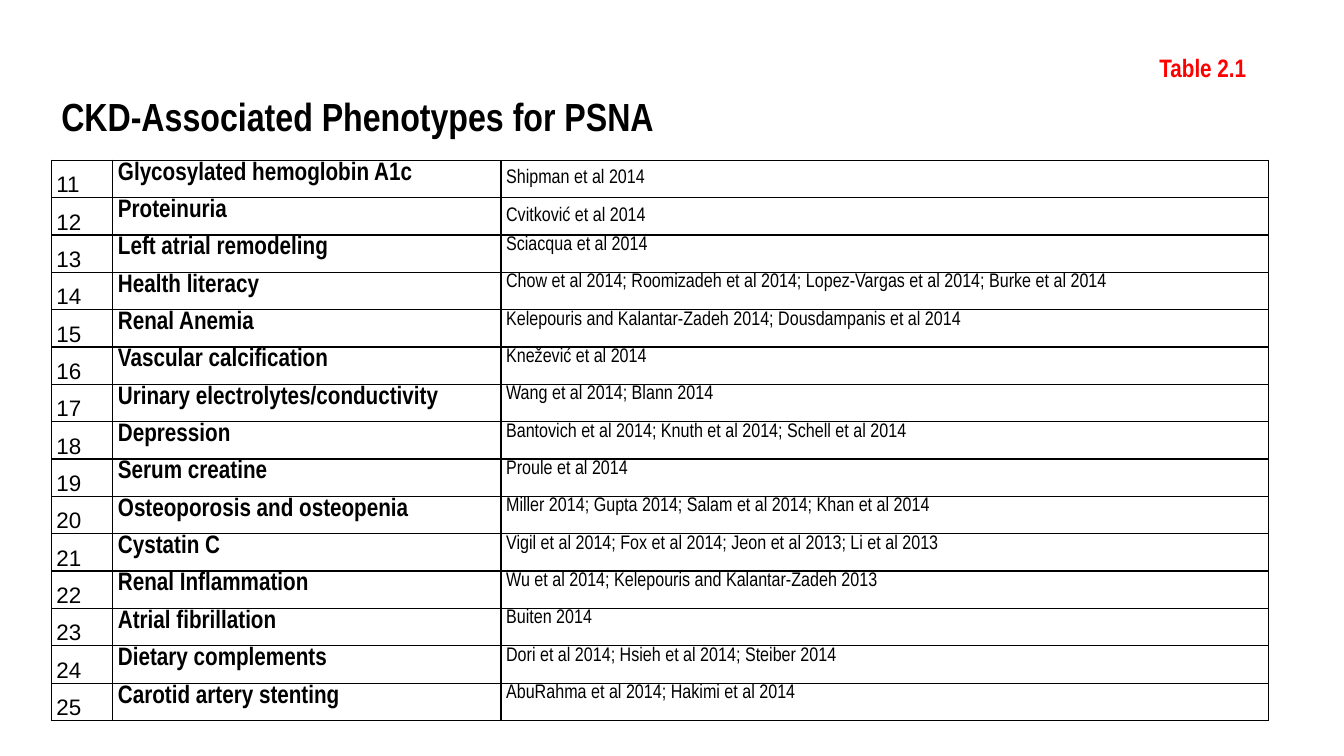
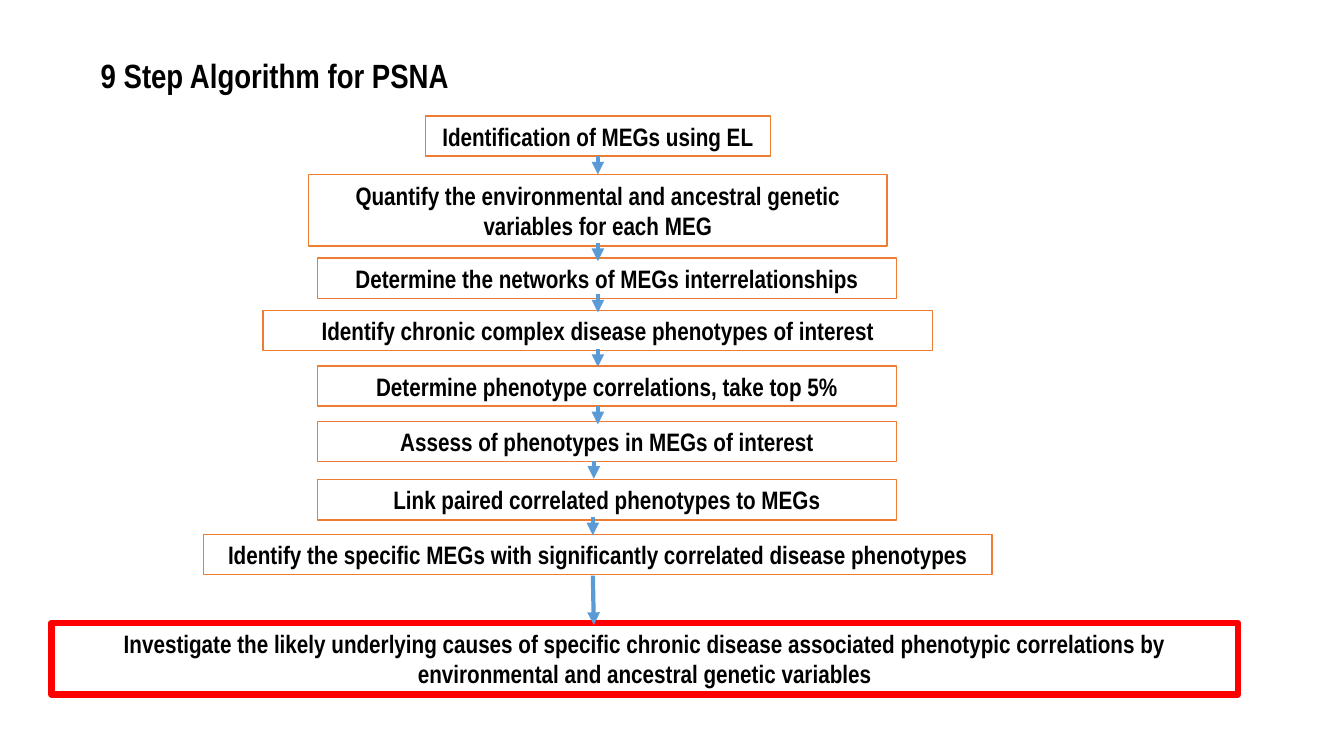
from pptx import Presentation
from pptx import util as u
from pptx.dml.color import RGBColor
from pptx.enum import shapes, text
from pptx.oxml import parse_xml
from pptx.oxml.ns import nsdecls

BLACK, WHITE, RED = "000000", "FFFFFF", "FF0000"
ORANGE, BLUE = "ED7D31", "5B9BD5"
NARROW = "Arial Narrow"


def rgb(hue):
    return RGBColor.from_string(hue)


def inch(*sizes):
    return [u.Inches(s) for s in sizes]


class Deck:
    """Holds the shared style and the current slide."""
    base = {"name": NARROW, "size": 18, "bold": True}

    def __init__(self):
        self.prs = Presentation()
        self.prs.slide_width, self.prs.slide_height = inch(13.33, 7.5)

    def page(self):
        self.slide = self.prs.slides.add_slide(self.prs.slide_layouts[6])

    def put(self, frame, words, hue=BLACK, align=None, space=None, **look):
        """Set the text of a frame in the shared style, changed by look."""
        par = frame.paragraphs[0]
        par.alignment, par.line_spacing = align, space
        run = par.add_run()
        run.text = words
        look = {**self.base, **look}
        look["size"] = u.Pt(look["size"])
        for key, val in look.items():
            setattr(run.font, key, val)
        run.font.color.rgb = rgb(hue)

    def label(self, words, at, wrap=True, **look):
        frame = self.slide.shapes.add_textbox(*inch(*at)).text_frame
        frame.word_wrap = wrap
        frame.auto_size = text.MSO_AUTO_SIZE.SHAPE_TO_FIT_TEXT
        self.put(frame, words, **look)

    def box(self, words, at, edge=ORANGE, width=1):
        box = self.slide.shapes.add_shape(
            shapes.MSO_SHAPE.RECTANGLE, *inch(*at))
        box.shadow.inherit = False
        box.fill.solid()
        box.fill.fore_color.rgb = rgb(WHITE)
        box.line.color.rgb = rgb(edge)
        box.line.width = u.Pt(width)
        box.text_frame.word_wrap = True
        box.text_frame.auto_size = text.MSO_AUTO_SIZE.SHAPE_TO_FIT_TEXT
        self.put(box.text_frame, words, align=text.PP_ALIGN.CENTER)
        return box

    def arrow(self, *ends):
        line = self.slide.shapes.add_connector(
            shapes.MSO_CONNECTOR.STRAIGHT, *inch(*ends))
        line.line.color.rgb = rgb(BLUE)
        line.line.width = u.Pt(3)
        ln = line.line._get_or_add_ln()
        ln.append(parse_xml(f'<a:tailEnd {nsdecls("a")} type="triangle"/>'))
        ln.addnext(parse_xml(f'<a:effectLst {nsdecls("a")}/>'))
        return line

    def rule(self, cell):
        """Draw thin black borders on a cell and leave it unfilled."""
        props = cell._tc.get_or_add_tcPr()
        for side in "LRTB":
            props.append(parse_xml(
                f'<a:ln{side} {nsdecls("a")} w="12700"><a:solidFill>'
                f'<a:srgbClr val="{BLACK}"/></a:solidFill></a:ln{side}>'))
        cell.fill.background()

    def table(self, rows, at, cols, high, looks):
        """looks(row, column) gives the text format of a cell."""
        grid = self.slide.shapes.add_table(
            len(rows), len(cols),
            *inch(*at, sum(cols), high * len(rows))).table
        grid.first_row = grid.horz_banding = False
        for col, wide in zip(grid.columns, cols):
            col.width = u.Inches(wide)
        pads = {"margin_left": 0.05, "margin_right": 0.05,
                "margin_top": 0, "margin_bottom": 0}
        for r, row in enumerate(rows):
            grid.rows[r].height = u.Inches(high)
            for c, words in enumerate(row):
                cell = grid.cell(r, c)
                for key, val in pads.items():
                    setattr(cell, key, u.Inches(val))
                self.rule(cell)
                self.put(cell.text_frame, words, **looks(r, c))


TRAITS = [
    ("Glycosylated hemoglobin A1c", "Shipman et al 2014"),
    ("Proteinuria", "Cvitković et al 2014"),
    ("Left atrial remodeling", "Sciacqua et al 2014"),
    ("Health literacy", "Chow et al 2014; Roomizadeh et al 2014; "
     "Lopez-Vargas et al 2014; Burke et al 2014"),
    ("Renal Anemia",
     "Kelepouris and Kalantar-Zadeh 2014; Dousdampanis et al 2014"),
    ("Vascular calcification", "Knežević et al 2014"),
    ("Urinary electrolytes/conductivity", "Wang et al 2014; Blann 2014"),
    ("Depression",
     "Bantovich et al 2014; Knuth et al 2014; Schell et al 2014"),
    ("Serum creatine", "Proule et al 2014"),
    ("Osteoporosis and osteopenia",
     "Miller 2014; Gupta 2014; Salam et al 2014; Khan et al 2014"),
    ("Cystatin C",
     "Vigil et al 2014; Fox et al 2014; Jeon et al 2013; Li et al 2013"),
    ("Renal Inflammation",
     "Wu et al 2014; Kelepouris and Kalantar-Zadeh 2013"),
    ("Atrial fibrillation", "Buiten 2014"),
    ("Dietary complements",
     "Dori et al 2014; Hsieh et al 2014; Steiber 2014"),
    ("Carotid artery stenting", "AbuRahma et al 2014; Hakimi et al 2014"),
]

# Text, left, top, width, height
STEPS = [
    ("Identification of MEGs using EL", 4.22, 1.15, 3.42, 0.4),
    ("Quantify the environmental and ancestral genetic variables "
     "for each MEG", 3.06, 1.73, 5.74, 0.71),
    ("Determine the networks of MEGs interrelationships",
     3.15, 2.56, 5.74, 0.4),
    ("Identify chronic complex disease phenotypes of interest",
     2.61, 3.08, 6.64, 0.4),
    ("Determine phenotype correlations, take top 5%",
     3.15, 3.63, 5.74, 0.4),
    ("Assess of phenotypes in MEGs of interest", 3.15, 4.18, 5.74, 0.4),
    ("Link paired correlated phenotypes to MEGs", 3.15, 4.76, 5.74, 0.4),
    ("Identify the specific MEGs with significantly correlated disease "
     "phenotypes", 2.02, 5.3, 7.82, 0.4),
]
GOAL = ("Investigate the likely underlying causes of specific chronic "
        "disease associated phenotypic correlations by environmental and "
        "ancestral genetic variables")

# Start of each short arrow
STARTS = [(5.93, 1.55), (5.93, 2.41), (5.93, 2.92), (5.93, 3.46),
          (5.93, 4.03), (5.89, 4.57), (5.88, 5.13)]


def look(row, col):
    if col == 0:
        return {"name": "Arial", "size": 16, "bold": False, "space": 1.5}
    if col == 1:
        return {"space": 1.07}
    return {"size": 14, "bold": False, "space": 1.5 if row < 2 else 1.07}


def traits(deck):
    deck.page()
    rows = [(str(n), *pair) for n, pair in enumerate(TRAITS, 11)]
    deck.table(rows, (0.51, 1.59), (0.61, 3.85, 7.61), 0.28, look)
    deck.label("CKD-Associated Phenotypes for PSNA",
               (0.51, 0.87, 11.99, 0.57), size=28)
    deck.label("Table 2.1", (11.4, 0.47, 1.08, 0.4), wrap=False, hue=RED)


def steps(deck):
    deck.page()
    deck.label("9 Step Algorithm for PSNA", (0.9, 0.5, 9.69, 0.5), size=24)
    boxes = [deck.box(words, at) for words, *at in STEPS]
    deck.box(GOAL, (0.51, 6.18, 11.77, 0.71), RED, 4.5)
    lines = [deck.arrow(x, y, x, y + 0.18) for x, y in STARTS]
    lines[0].begin_connect(boxes[0], 2)
    lines[0].end_connect(boxes[1], 0)
    deck.arrow(5.88, 5.71, 5.89, 6.2)


def main():
    deck = Deck()
    traits(deck)
    steps(deck)
    deck.prs.save("out.pptx")


if __name__ == "__main__":
    main()
